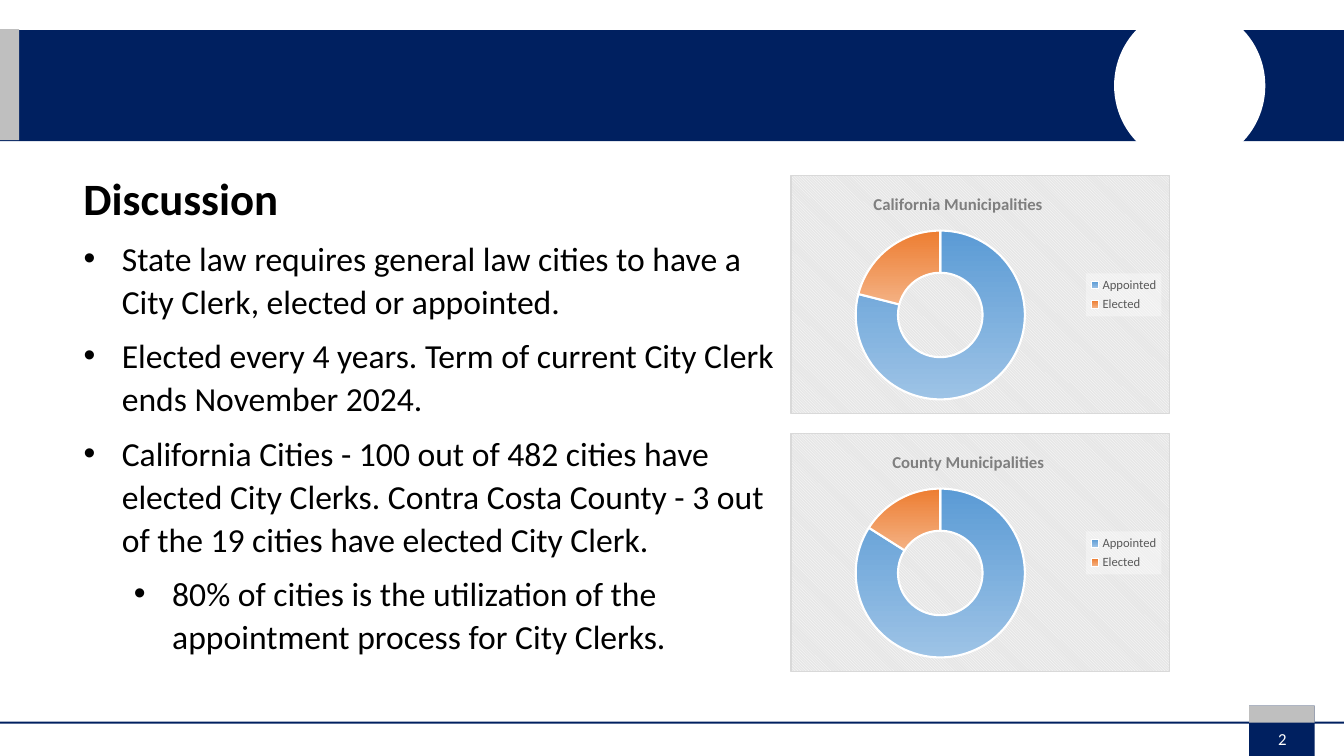
from dataclasses import dataclass

from lxml import etree
from pptx import Presentation
from pptx.chart.data import CategoryChartData
from pptx.dml.color import RGBColor
from pptx.enum.chart import XL_CHART_TYPE, XL_LEGEND_POSITION
from pptx.enum.shapes import MSO_SHAPE
from pptx.enum.text import MSO_ANCHOR, PP_ALIGN
from pptx.oxml import parse_xml
from pptx.oxml.ns import nsdecls, qn
from pptx.util import Inches, Pt

RECT, OVAL = MSO_SHAPE.RECTANGLE, MSO_SHAPE.OVAL
DOUGHNUT, RIGHT = XL_CHART_TYPE.DOUGHNUT, XL_LEGEND_POSITION.RIGHT
TOP, MIDDLE = MSO_ANCHOR.TOP, MSO_ANCHOR.MIDDLE
LEFT, CENTER = PP_ALIGN.LEFT, PP_ALIGN.CENTER
FONT = "Calibri"
COLORS = {
    "navy": "002060", "white": "FFFFFF", "silver": "BFBFBF", "black": "000000",
    "title": "7F7F7F", "legend": "595959", "panel": "E6E6E6", "border": "D9D9D9",
}
SLICE_GRADIENTS = [("5B9BD5", "9DC3E6"), ("ED7D31", "F4B183")]


@dataclass
class Band:
    left: float
    top: float
    width: float
    height: float
    color: str
    outline: MSO_SHAPE = RECT


@dataclass
class Point:
    text: str
    level: int = 0


@dataclass
class Survey:
    title: str
    top: float
    title_x: float
    shares: tuple[int, int]


BANDS = [
    Band(0, 0.3, 13.33, 1.1, "navy"),
    Band(11.05, 0.07, 1.5, 1.56, "white", OVAL),
    Band(0, 0.29, 0.19, 1.1, "silver"),
    Band(0, 7.16, 13.33, 0.02, "navy"),
    Band(12.39, 7, 0.65, 0.5, "navy"),
    Band(12.39, 7, 0.65, 0.17, "silver"),
]
POINTS = [
    Point("State law requires general law cities to have a City Clerk, elected or appointed."),
    Point("Elected every 4 years. Term of current City Clerk ends November 2024."),
    Point("California Cities - 100 out of 482 cities have elected City Clerks. "
          "Contra Costa County - 3 out of the 19 cities have elected City Clerk."),
    Point("80% of cities is the utilization of the appointment process for City Clerks.", 1),
]
SURVEYS = [
    Survey("California Municipalities", 1.74, 0.21, (79, 21)),
    Survey("County Municipalities", 4.3, 0.26, (84, 16)),
]


def rgb(name: str) -> RGBColor:
    return RGBColor.from_string(COLORS[name])


def style_font(font, size: float, color: str, bold: bool = False) -> None:
    font.name, font.size, font.bold = FONT, Pt(size), bold
    font.color.rgb = rgb(color)


def draw_band(slide, band: Band) -> None:
    shape = slide.shapes.add_shape(
        band.outline, *map(Inches, (band.left, band.top, band.width, band.height)))
    shape.shadow.inherit = False
    shape.fill.solid()
    shape.fill.fore_color.rgb = rgb(band.color)
    shape.line.fill.background()


def add_text(slide, box: tuple, points: list[Point], *, size: float, color: str = "black",
             bold: bool = False, align=LEFT, anchor=TOP, bullets: bool = False) -> None:
    frame = slide.shapes.add_textbox(*map(Inches, box)).text_frame
    frame.word_wrap = True
    frame.vertical_anchor = anchor
    for index, point in enumerate(points):
        paragraph = frame.paragraphs[0] if index == 0 else frame.add_paragraph()
        paragraph.alignment = align
        if bullets:
            paragraph.level = point.level
            paragraph.line_spacing = 1.07
            paragraph.space_after = Pt(8)
            properties = paragraph._p.get_or_add_pPr()
            properties.set("marL", str(Inches(0.38 + 0.5 * point.level)))
            properties.set("indent", str(Inches(-0.38)))
            etree.SubElement(properties, qn("a:buFont"), typeface="Arial")
            etree.SubElement(properties, qn("a:buChar"), char="•")
        run = paragraph.add_run()
        run.text = point.text
        style_font(run.font, size, color, bold)


def manual_layout(**fractions: float):
    layout = parse_xml(f'<c:layout {nsdecls("c")}><c:manualLayout/></c:layout>')
    manual = layout[0]
    if "w" in fractions and fractions.pop("inner", False):
        etree.SubElement(manual, qn("c:layoutTarget"), val="inner")
    for mode in ("xMode", "yMode"):
        etree.SubElement(manual, qn(f"c:{mode}"), val="edge")
    for side, value in fractions.items():
        etree.SubElement(manual, qn(f"c:{side}"), val=str(value))
    return layout


def place(part, layout, after: str = "") -> None:
    for old in part.findall(qn("c:layout")):
        part.remove(old)
    if after:
        part.find(qn(after)).addnext(layout)
    else:
        part.insert(0, layout)


def draw_survey(slide, survey: Survey) -> None:
    data = CategoryChartData()
    data.categories = ["Appointed", "Elected"]
    data.add_series("Series 1", survey.shares)
    chart = slide.shapes.add_chart(
        DOUGHNUT, *map(Inches, (7.84, survey.top, 3.76, 2.37)), data).chart
    style_font(chart.font, 10, "black")

    chart.has_title = True
    heading = chart.chart_title.text_frame
    heading.text = survey.title
    style_font(heading.paragraphs[0].runs[0].font, 12, "title", True)
    place(chart.chart_title._element, manual_layout(x=survey.title_x, y=0.06), "c:tx")

    chart.has_legend = True
    legend = chart.legend
    legend.position = RIGHT
    legend.include_in_layout = False
    style_font(legend.font, 9, "legend")
    place(legend._element, manual_layout(x=0.78, y=0.41, w=0.2, h=0.18), "c:legendPos")
    legend._element.find(qn("c:txPr")).addprevious(parse_xml(
        f'<c:spPr {nsdecls("c", "a")}><a:solidFill><a:srgbClr val="{COLORS["white"]}">'
        '<a:alpha val="39000"/></a:srgbClr></a:solidFill></c:spPr>'))

    ring = chart.plots[0]
    ring.vary_by_categories = True
    ring._element.find(qn("c:holeSize")).set("val", "70")
    place(ring._element.getparent(),
          manual_layout(inner=True, x=0.17, y=0.23, w=0.45, h=0.71))
    for index, gradient in enumerate(SLICE_GRADIENTS):
        piece = ring.series[0].points[index].format
        piece.fill.gradient()
        piece.fill.gradient_angle = 270
        for stop, color in zip(piece.fill.gradient_stops, gradient):
            stop.color.rgb = RGBColor.from_string(color)
        piece.line.color.rgb = rgb("white")
        piece.line.width = Pt(1.5)

    chart._chartSpace.find(qn("c:chart")).addnext(parse_xml(
        f'<c:spPr {nsdecls("c", "a")}><a:pattFill prst="dkDnDiag">'
        f'<a:fgClr><a:srgbClr val="{COLORS["white"]}"/></a:fgClr>'
        f'<a:bgClr><a:srgbClr val="{COLORS["panel"]}"/></a:bgClr></a:pattFill>'
        f'<a:ln w="{Pt(0.75)}"><a:solidFill><a:srgbClr val="{COLORS["border"]}"/>'
        '</a:solidFill></a:ln></c:spPr>'))


def main() -> None:
    deck = Presentation()
    deck.slide_width, deck.slide_height = Inches(13.33), Inches(7.5)
    slide = deck.slides.add_slide(deck.slide_layouts[6])
    for band in BANDS:
        draw_band(slide, band)
    add_text(slide, (12.27, 7.13, 0.9, 0.4), [Point("2")], size=12, color="white",
             align=CENTER, anchor=MIDDLE)
    add_text(slide, (0.73, 1.64, 10.43, 0.64), [Point("Discussion")], size=32, bold=True)
    add_text(slide, (0.73, 2.28, 7.11, 4.31), POINTS, size=24, bullets=True)
    for survey in SURVEYS:
        draw_survey(slide, survey)
    deck.save("out.pptx")


if __name__ == "__main__":
    main()
